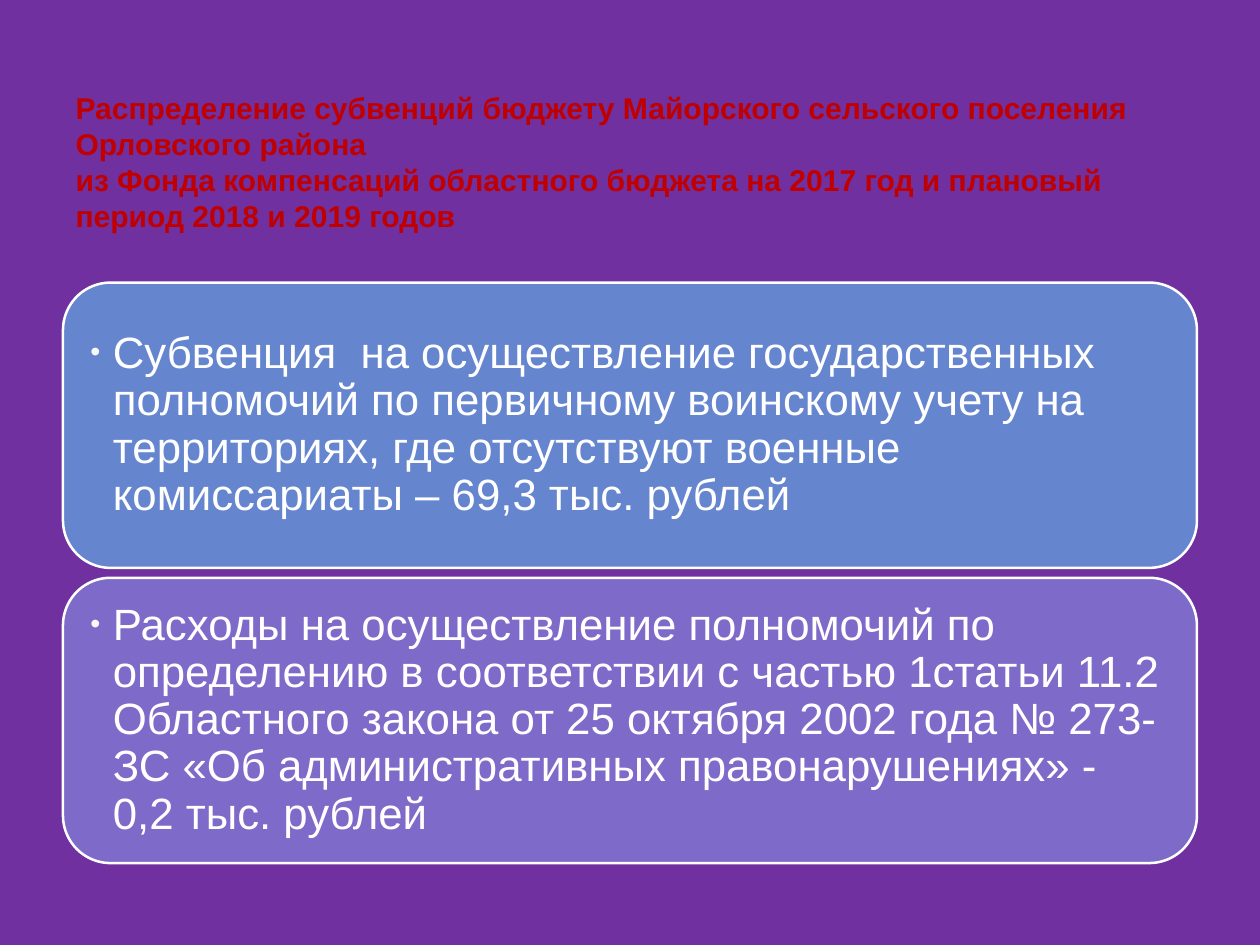
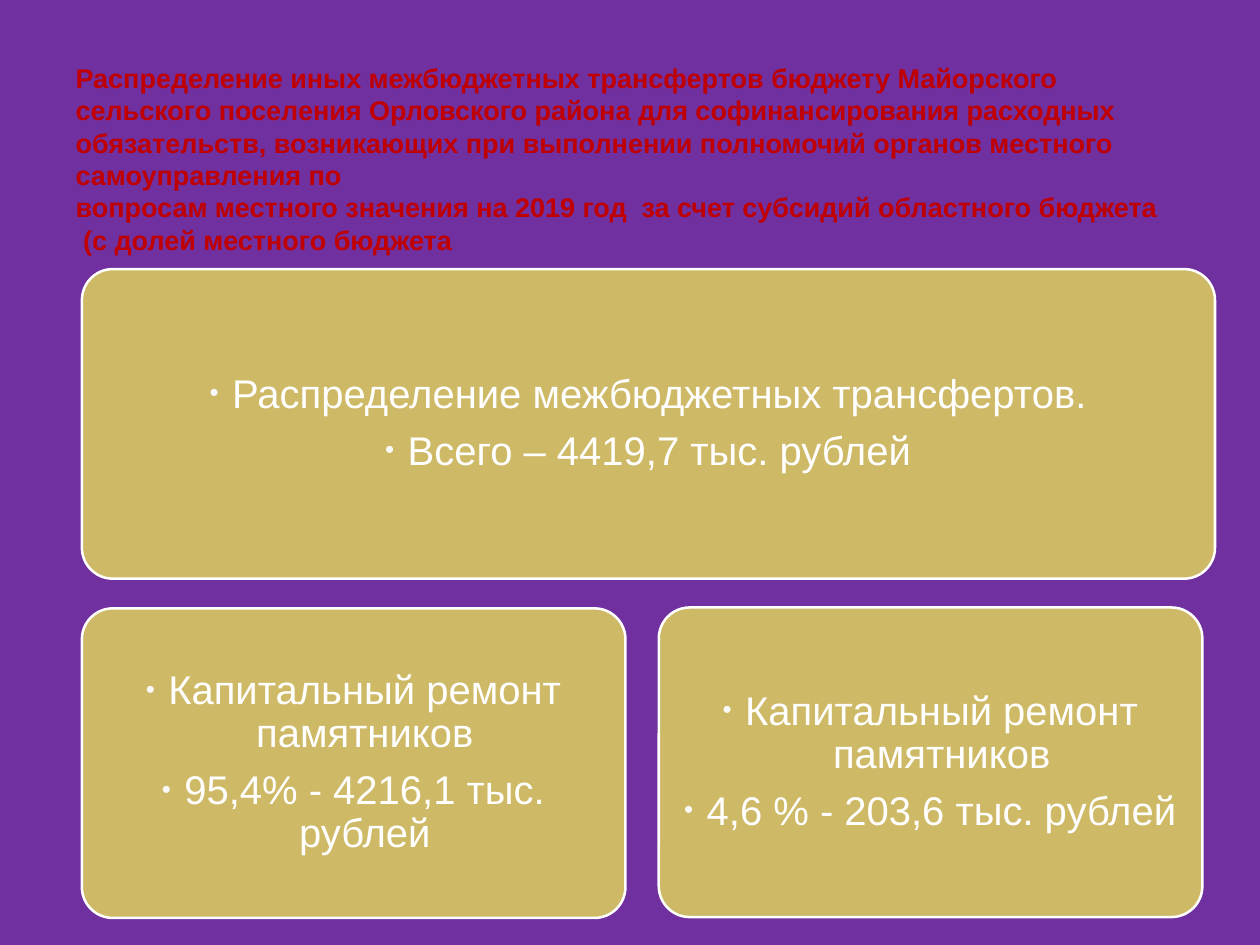
from dataclasses import dataclass

from lxml import etree
from pptx import Presentation
from pptx.dml.color import RGBColor
from pptx.enum.shapes import MSO_SHAPE
from pptx.enum.text import MSO_ANCHOR, PP_ALIGN
from pptx.oxml.ns import qn
from pptx.util import Inches, Pt

ROUNDED = MSO_SHAPE.ROUNDED_RECTANGLE
BOTTOM, MIDDLE = MSO_ANCHOR.BOTTOM, MSO_ANCHOR.MIDDLE
LEFT, CENTER = PP_ALIGN.LEFT, PP_ALIGN.CENTER
BLANK_LAYOUT = 6


@dataclass(frozen=True)
class Theme:
    font: str = "Arial"
    background: str = "7030A0"
    title: str = "C00000"
    light: str = "FFFFFF"
    bullet: str = "F9F9F9"
    blue: str = "6585CF"
    violet: str = "7E6BC9"
    gold: str = "CEB966"
    title_large: float = 24
    title_small: float = 21.6
    body_large: float = 35
    body_small: float = 32


THEME = Theme()


@dataclass(frozen=True)
class CardStyle:
    size: float
    corner: float
    inset: float
    align: PP_ALIGN


GRANT_CARD = CardStyle(THEME.body_large, 0.1667, 0.15, LEFT)
TRANSFER_CARD = CardStyle(THEME.body_small, 0.1, 0.13, CENTER)


def rgb(colour):
    return RGBColor.from_string(colour)


def set_insets(frame, side, top, bottom):
    frame.margin_left = frame.margin_right = Inches(side)
    frame.margin_top, frame.margin_bottom = Inches(top), Inches(bottom)


def format_runs(paragraph, size, colour, bold=False):
    for run in paragraph.runs:
        run.font.name = THEME.font
        run.font.size = Pt(size)
        run.font.bold = bold
        run.font.color.rgb = rgb(colour)


def add_bullet(paragraph, hanging=0.25):
    properties = paragraph._p.get_or_add_pPr()
    properties.set("marL", str(Inches(hanging)))
    properties.set("indent", str(-Inches(hanging)))
    colour = etree.SubElement(properties, qn("a:buClr"))
    etree.SubElement(colour, qn("a:srgbClr"), val=THEME.bullet)
    etree.SubElement(properties, qn("a:buSzPct"), val="65000")
    etree.SubElement(properties, qn("a:buFont"), typeface=THEME.font)
    etree.SubElement(properties, qn("a:buChar"), char="•")


def add_titled_slide(deck, title, size, height, bottom_inset=0.07):
    slide = deck.slides.add_slide(deck.slide_layouts[BLANK_LAYOUT])
    fill = slide.background.fill
    fill.solid()
    fill.fore_color.rgb = rgb(THEME.background)

    heading = slide.shapes.add_textbox(
        Inches(0.7), Inches(0.42), Inches(12.6), Inches(height))
    frame = heading.text_frame
    frame.word_wrap = True
    frame.vertical_anchor = BOTTOM
    set_insets(frame, 0.14, 0.07, bottom_inset)
    frame.paragraphs[0].text = title
    format_runs(frame.paragraphs[0], size, THEME.title, bold=True)
    return slide


def add_card(slide, bounds, colour, items, style):
    """Add a rounded card with one bulleted paragraph per item."""
    card = slide.shapes.add_shape(ROUNDED, *map(Inches, bounds))
    card.shadow.inherit = False
    card.adjustments[0] = style.corner
    card.fill.solid()
    card.fill.fore_color.rgb = rgb(colour)
    card.line.color.rgb = rgb(THEME.light)
    card.line.width = Pt(2)

    frame = card.text_frame
    frame.word_wrap = True
    frame.vertical_anchor = MIDDLE
    set_insets(frame, style.inset, style.inset, style.inset)
    frame.text = "\n".join(items)
    for paragraph in frame.paragraphs:
        paragraph.alignment = style.align
        paragraph.line_spacing = 0.9
        paragraph.space_after = Pt(round(style.size * 0.35))
        add_bullet(paragraph)
        format_runs(paragraph, style.size, THEME.light)


def build_grants_slide(deck):
    slide = add_titled_slide(
        deck,
        "Распределение субвенций бюджету Майорского сельского поселения "
        "Орловского района\v"
        "из Фонда компенсаций областного бюджета на 2017 год и плановый "
        "период 2018 и 2019 годов",
        THEME.title_large, height=2.64, bottom_inset=0.47)
    grants = [
        (THEME.blue,
         "Субвенция  на осуществление государственных полномочий по "
         "первичному воинскому учету на территориях, где отсутствуют "
         "военные комиссариаты – 69,3 тыс. рублей"),
        (THEME.violet,
         "Расходы на осуществление полномочий по определению в "
         "соответствии с частью 1статьи 11.2 Областного закона от "
         "25 октября 2002 года № 273-ЗС «Об административных "
         "правонарушениях» - 0,2 тыс. рублей"),
    ]
    top, height, gap = 3.14, 3.17, 0.11
    for row, (colour, grant) in enumerate(grants):
        bounds = (0.7, top + row * (height + gap), 12.6, height)
        add_card(slide, bounds, colour, [grant], GRANT_CARD)


def build_transfers_slide(deck):
    slide = add_titled_slide(
        deck,
        "Распределение иных межбюджетных трансфертов бюджету Майорского "
        "сельского поселения Орловского района для софинансирования "
        "расходных обязательств, возникающих при выполнении полномочий "
        "органов местного самоуправления по\v"
        "вопросам местного значения на 2019 год  за счет субсидий "
        "областного бюджета\v (с долей местного бюджета",
        THEME.title_small, height=2.49)
    repair = "Капитальный ремонт памятников"
    height = 3.44
    transfers = [
        ((0.91, 2.99, 12.59, height),
         ["Распределение межбюджетных трансфертов.",
          "Всего – 4419,7 тыс. рублей"]),
        ((0.91, 6.76, 6.04, height),
         [repair, "95,4% - 4216,1 тыс. рублей"]),
        ((7.32, 6.75, 6.04, height),
         [repair, "4,6 % - 203,6 тыс. рублей"]),
    ]
    for bounds, items in transfers:
        add_card(slide, bounds, THEME.gold, items, TRANSFER_CARD)


def main():
    deck = Presentation()
    deck.slide_width, deck.slide_height = Inches(14), Inches(10.5)
    build_grants_slide(deck)
    build_transfers_slide(deck)
    deck.save("out.pptx")


if __name__ == "__main__":
    main()
